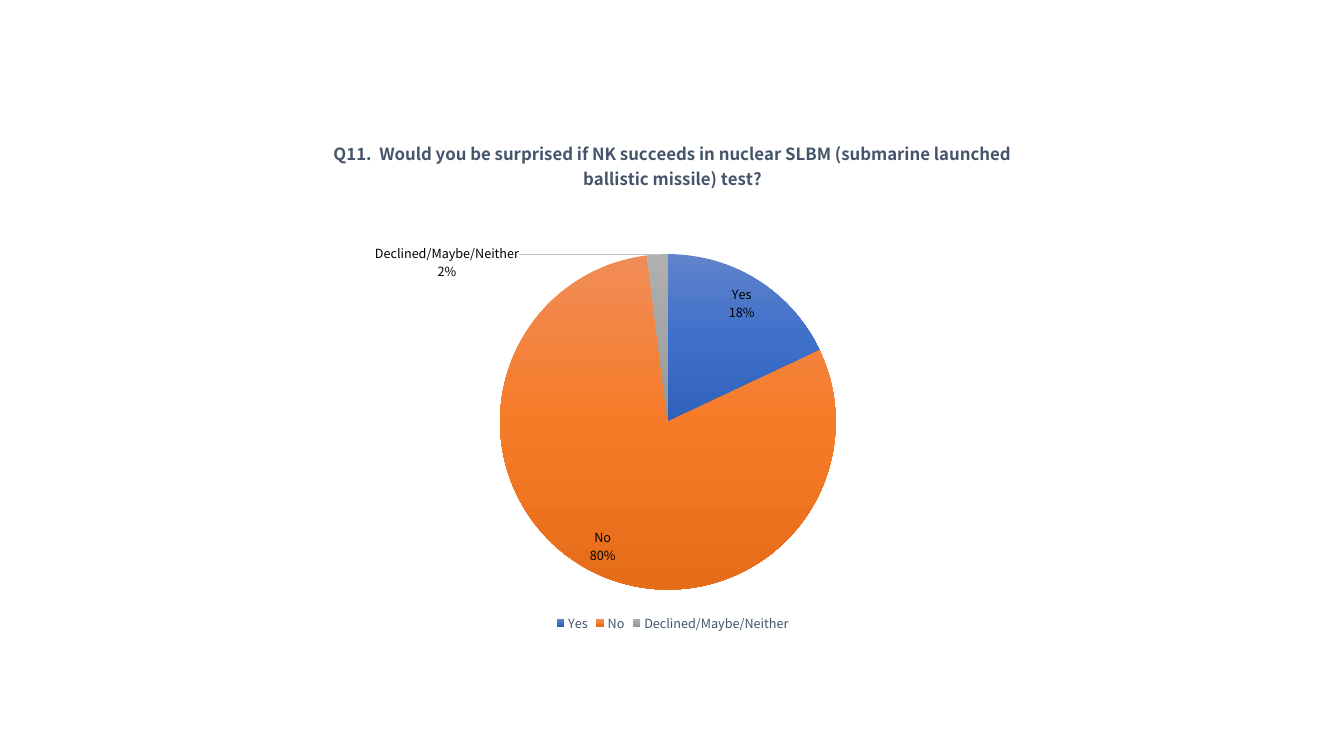
from lxml import etree
from pptx import Presentation
from pptx.chart.data import CategoryChartData
from pptx.dml.color import RGBColor
from pptx.enum.chart import XL_CHART_TYPE as ChartType
from pptx.enum.chart import XL_LABEL_POSITION as LabelPosition
from pptx.enum.chart import XL_LEGEND_POSITION as LegendPosition
from pptx.oxml import parse_xml
from pptx.oxml.ns import nsdecls, qn
from pptx.util import Inches, Pt

# Content
QUESTION = ("Q11.  Would you be surprised if NK succeeds in nuclear SLBM "
            "(submarine launched ballistic missile) test?")
ANSWERS = [  # category, percent, gradient from top to bottom
    ("Yes", 18, ("6183CB", "3E70CA", "3062BB")),
    ("No", 80, ("F18C57", "F67B28", "E56C19")),
    ("Declined/Maybe/Neither", 2, ("AFAFAF", "A5A5A5", "939393")),
]
COLORS = {"text": "000000", "heading": "44546A", "leader": "BFBFBF"}
FONT = "Noto Sans CJK KR"
CHART_BOX = (2.14, 1.19, 9.06, 5.12)
PIE_AREA = {"x": 0.31, "y": 0.26, "w": 0.37, "h": 0.65}
OUTSIDE_LABEL = 2
OUTSIDE_OFFSET = {"x": -0.23, "y": 0.06}


def style_font(font, size, color, bold=False):
    font.name = FONT
    font.size = Pt(size)
    font.bold = bold
    font.color.rgb = RGBColor.from_string(COLORS[color])


def make_layout(values, inner=False):
    target = '<c:layoutTarget val="inner"/>' if inner else ""
    modes = '<c:xMode val="edge"/><c:yMode val="edge"/>' if inner else ""
    sizes = "".join(f'<c:{key} val="{value}"/>' for key, value in values.items())
    return parse_xml(f'<c:layout {nsdecls("c")}><c:manualLayout>{target}{modes}{sizes}'
                     '</c:manualLayout></c:layout>')


def fill_gradient(point, colors):
    point.format.line.fill.background()
    stops = "".join(f'<a:gs pos="{index * 50000}"><a:srgbClr val="{color}"/></a:gs>'
                    for index, color in enumerate(colors))
    gradient = parse_xml(f'<a:gradFill {nsdecls("a")} rotWithShape="1"><a:gsLst>{stops}'
                         '</a:gsLst><a:lin ang="5400000" scaled="0"/></a:gradFill>')
    point.format.line._ln.addprevious(gradient)


def show_category_and_percent(labels):
    for flag, value in (("showVal", "0"), ("showCatName", "1"), ("showPercent", "1")):
        labels.find(qn(f"c:{flag}")).set("val", value)
    separator = etree.Element(qn("c:separator"))
    separator.text = "\n"
    labels.find(qn("c:showBubbleSize")).addnext(separator)


presentation = Presentation()
presentation.slide_width = Inches(13.33)
presentation.slide_height = Inches(7.5)
slide = presentation.slides.add_slide(presentation.slide_layouts[6])

# Pie chart
chart_data = CategoryChartData()
chart_data.categories = [name for name, _, _ in ANSWERS]
chart_data.add_series(QUESTION, [percent for _, percent, _ in ANSWERS])
chart = slide.shapes.add_chart(
    ChartType.PIE, *(Inches(length) for length in CHART_BOX), chart_data).chart
style_font(chart.font, 10, "text")
plot = chart.plots[0]
plot.vary_by_categories = True
series = plot.series[0]
for index, (_, _, colors) in enumerate(ANSWERS):
    fill_gradient(series.points[index], colors)

plot_area = chart._chartSpace.chart.plotArea
for old_layout in plot_area.findall(qn("c:layout")):
    plot_area.remove(old_layout)
plot_area.insert(0, make_layout(PIE_AREA, inner=True))

# Title
chart.has_title = True
chart.chart_title.include_in_layout = False
run = chart.chart_title.text_frame.paragraphs[0].add_run()
run.text = QUESTION
style_font(run.font, 12, "heading", bold=True)

# Legend
chart.has_legend = True
chart.legend.position = LegendPosition.BOTTOM
chart.legend.include_in_layout = False
style_font(chart.legend.font, 9, "heading")

# Data labels
labels = series.data_labels
style_font(labels.font, 9, "text")
labels.number_format = "0%"
labels.number_format_is_linked = False
labels.position = LabelPosition.INSIDE_END
label_list = labels._element
show_category_and_percent(label_list)

# Outside label with its leader line
outside_label = series.points[OUTSIDE_LABEL].data_label
style_font(outside_label.font, 9, "text")
outside_label.position = LabelPosition.OUTSIDE_END
outside = label_list.find(qn("c:dLbl"))
show_category_and_percent(outside)
outside.find(qn("c:idx")).addnext(make_layout(OUTSIDE_OFFSET))
for old_flag in label_list.findall(qn("c:showLeaderLines")):
    label_list.remove(old_flag)
etree.SubElement(label_list, qn("c:showLeaderLines")).set("val", "1")
label_list.append(parse_xml(
    f'<c:leaderLines {nsdecls("c", "a")}><c:spPr><a:ln w="9525"><a:solidFill>'
    f'<a:srgbClr val="{COLORS["leader"]}"/></a:solidFill></a:ln></c:spPr></c:leaderLines>'))

presentation.save("out.pptx")
